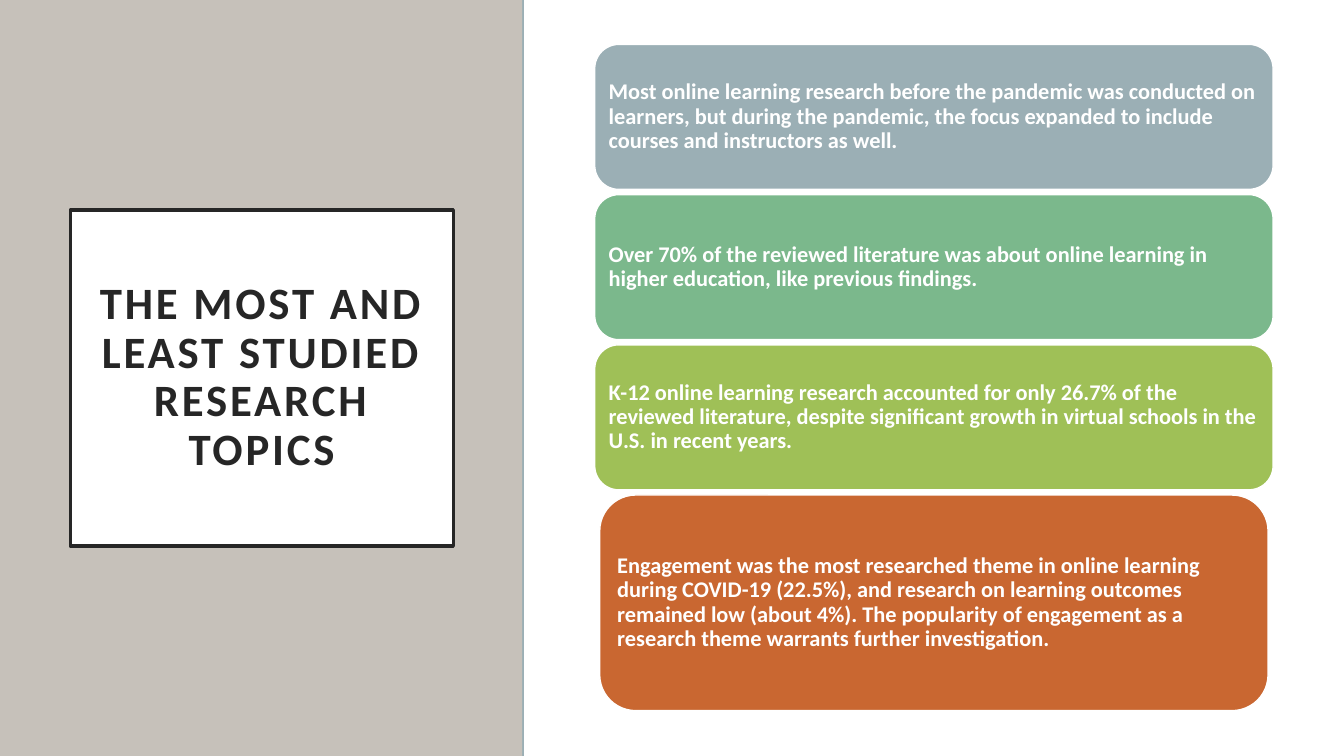
from pptx import Presentation
from pptx.dml.color import RGBColor
from pptx.enum.shapes import MSO_SHAPE as Shape
from pptx.enum.text import MSO_ANCHOR as Anchor, MSO_AUTO_SIZE as AutoSize, PP_ALIGN as Align
from pptx.util import Pt

COLORS = {
    "white": "FFFFFF", "ink": "262626", "taupe": "C6C1BA", "slate": "9BAFB5",
    "green": "7BB88C", "lime": "9FC057", "rust": "C96731",
}
TITLE = "THE MOST AND LEAST STUDIED RESEARCH TOPICS"
# text, colour, width, height
CARDS = [
    ("Most online learning research before the pandemic was conducted on learners, "
     "but during the pandemic, the focus expanded to include courses and instructors "
     "as well.", "slate", 484.6, 103.6),
    ("Over 70% of the reviewed literature was about online learning in higher "
     "education, like previous findings.", "green", 484.6, 103.6),
    ("K-12 online learning research accounted for only 26.7% of the reviewed "
     "literature, despite significant growth in virtual schools in the U.S. in "
     "recent years.", "lime", 484.6, 103.6),
    ("Engagement was the most researched theme in online learning during COVID-19 "
     "(22.5%), and research on learning outcomes remained low (about 4%). The "
     "popularity of engagement as a research theme warrants further investigation.",
     "rust", 477.4, 154),
]
PAGE_WIDTH, PAGE_HEIGHT = 960, 540
# left, width, colour
PANELS = [(0, 480, "slate"), (0, 373, "taupe"), (374.4, 585.6, "white")]
CARD_CENTER, CARD_TOP, CARD_GAP = 667.1, 31.7, 3.7


def rgb(name):
    return RGBColor.from_string(COLORS[name])


def paint(box, fill, line=None, weight=1):
    box.shadow.inherit = False
    box.fill.solid()
    box.fill.fore_color.rgb = rgb(fill)
    if line:
        box.line.color.rgb = rgb(line)
        box.line.width = Pt(weight)
    else:
        box.line.fill.background()


def write(box, text, size, color, align, inset):
    """Fill the box with one bold paragraph and return its run."""
    frame = box.text_frame
    settings = {"word_wrap": True, "auto_size": AutoSize.NONE,
                "vertical_anchor": Anchor.MIDDLE}
    settings.update({f"margin_{side}": Pt(inset)
                     for side in ("left", "top", "right", "bottom")})
    for name, value in settings.items():
        setattr(frame, name, value)
    para = frame.paragraphs[0]
    para.alignment = align
    para.line_spacing = 0.9
    span = para.add_run()
    span.text = text
    for name, value in {"name": "Calibri", "size": Pt(size), "bold": True}.items():
        setattr(span.font, name, value)
    span.font.color.rgb = rgb(color)
    return span


def add_box(page, kind, *place):
    return page.shapes.add_shape(kind, *map(Pt, place))


def add_title(page):
    title = page.shapes.title
    place = {"left": 50.2, "top": 150, "width": 273.6, "height": 240}
    for name, value in place.items():
        setattr(title, name, Pt(value))
    paint(title, "white", "ink", 2.5)
    span = write(title, TITLE, 32, "ink", Align.CENTER, 14.4)
    span.font._element.set("spc", "200")
    # The placeholder comes first in the tree, so bring it above the panels.
    title.element.getparent().append(title.element)


def add_cards(page):
    top = CARD_TOP
    for text, color, width, height in CARDS:
        card = add_box(page, Shape.ROUNDED_RECTANGLE,
                       CARD_CENTER - width / 2, top, width, height)
        paint(card, color, "white")
        write(card, text, 16, "white", Align.LEFT, 5)
        top += height + CARD_GAP


def main():
    deck = Presentation()
    deck.slide_width, deck.slide_height = Pt(PAGE_WIDTH), Pt(PAGE_HEIGHT)
    page = deck.slides.add_slide(deck.slide_layouts[5])
    for left, width, color in PANELS:
        paint(add_box(page, Shape.RECTANGLE, left, 0, width, PAGE_HEIGHT), color)
    add_title(page)
    add_cards(page)
    deck.save("out.pptx")


if __name__ == "__main__":
    main()
